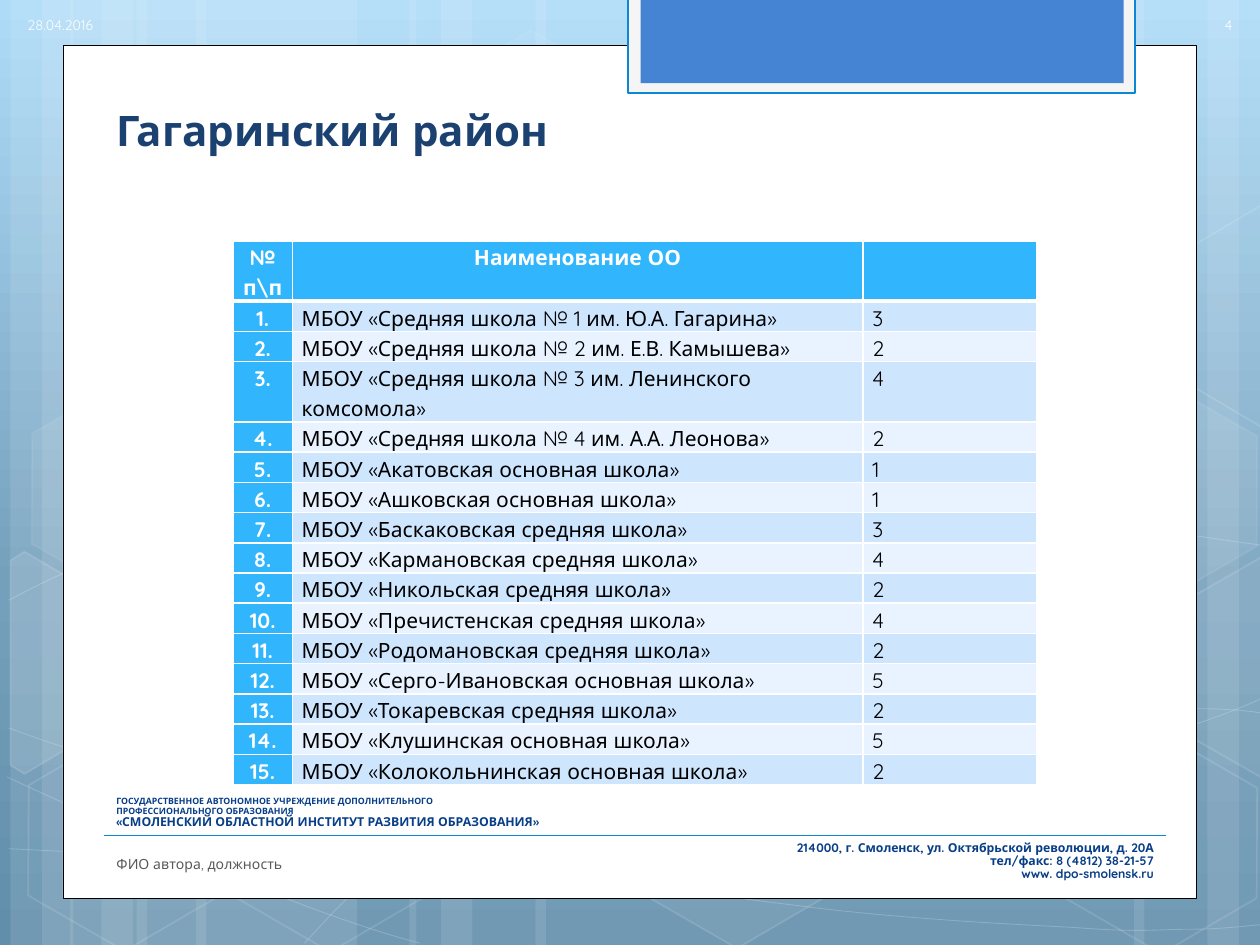
from copy import deepcopy
from math import cos, radians, sin

from lxml.etree import SubElement
from pptx import Presentation
from pptx.dml.color import RGBColor
from pptx.enum.shapes import MSO_CONNECTOR, MSO_SHAPE
from pptx.enum.text import MSO_ANCHOR, MSO_AUTO_SIZE, PP_ALIGN
from pptx.oxml.ns import qn
from pptx.util import Pt

FONT = "Quicksand"
WHITE = RGBColor(0xFF, 0xFF, 0xFF)
BLACK = RGBColor(0, 0, 0)
OFF_WHITE = RGBColor(0xFE, 0xFE, 0xFE)
GRAY = RGBColor(0x59, 0x59, 0x59)
NAVY = RGBColor(0x1B, 0x41, 0x71)
INSTITUTE_BLUE = RGBColor(0x07, 0x3E, 0x87)
LINE_BLUE = RGBColor(0x0B, 0x87, 0xD6)
TAB_BLUE = RGBColor(0x45, 0x84, 0xD3)
TAB_FRAME = RGBColor(0xF5, 0xF5, 0xF5)
HEADER_BLUE = RGBColor(0x31, 0xB6, 0xFD)
BANDS = (RGBColor(0xCE, 0xE5, 0xFE), RGBColor(0xE8, 0xF3, 0xFF))
SKY = ((0, RGBColor(0xAD, 0xDB, 0xF8)), (0.62, RGBColor(0x75, 0xA0, 0xBC)),
       (1, RGBColor(0x61, 0x8E, 0xAB)))

TITLE = "Гагаринский район"
HEADERS = ("№ п\\п", "Наименование ОО", "")
SCHOOLS = (
    ("МБОУ «Средняя школа № 1 им. Ю.А. Гагарина»", 3),
    ("МБОУ «Средняя школа № 2 им. Е.В. Камышева»", 2),
    ("МБОУ «Средняя школа № 3 им. Ленинского комсомола»", 4),
    ("МБОУ «Средняя школа № 4 им. А.А. Леонова»", 2),
    ("МБОУ «Акатовская основная школа»", 1),
    ("МБОУ «Ашковская основная школа»", 1),
    ("МБОУ «Баскаковская средняя школа»", 3),
    ("МБОУ «Кармановская средняя школа»", 4),
    ("МБОУ «Никольская средняя школа»", 2),
    ("МБОУ «Пречистенская средняя школа»", 4),
    ("МБОУ «Родомановская средняя школа»", 2),
    ("МБОУ «Серго-Ивановская основная школа»", 5),
    ("МБОУ «Токаревская средняя школа»", 2),
    ("МБОУ «Клушинская основная школа»", 5),
    ("МБОУ «Колокольнинская основная школа»", 2),
)
COLUMN_WIDTHS = (33.84, 326.16, 99.36)
LINE_HEIGHT = 17.25
TWO_LINE_ROWS = (0, 3)

# text, size, alignment, space before
INSTITUTE = (
    ("ГОСУДАРСТВЕННОЕ АВТОНОМНОЕ УЧРЕЖДЕНИЕ ДОПОЛНИТЕЛЬНОГО", 5, PP_ALIGN.LEFT, 0),
    ("ПРОФЕССИОНАЛЬНОГО ОБРАЗОВАНИЯ", 5, PP_ALIGN.LEFT, 0),
    ("«СМОЛЕНСКИЙ ОБЛАСТНОЙ ИНСТИТУТ РАЗВИТИЯ ОБРАЗОВАНИЯ»", 7, PP_ALIGN.LEFT, 0),
    ("214000, г. Смоленск, ул. Октябрьской революции, д. 20А", 7, PP_ALIGN.RIGHT, 7.1),
    ("тел/факс: 8 (4812) 38-21-57", 7, PP_ALIGN.RIGHT, 0),
    ("www. dpo-smolensk.ru", 7, PP_ALIGN.RIGHT, 0),
)
# text, box, colour, alignment
LABELS = (
    ("28.04.2016", (8.64, 4.32, 62.64, 20.16), OFF_WHITE, PP_ALIGN.LEFT),
    ("ФИО автора, должность", (59.5, 484.56, 275.76, 18), GRAY, PP_ALIGN.LEFT),
    ("4", (677.52, 4.32, 33.84, 20.16), OFF_WHITE, PP_ALIGN.RIGHT),
)

# left, width
STRIPS = ((78, 126), (6, 36), (24, 60), (112, 126), (40, 36), (58, 60),
          (528, 126), (690, 36), (648, 60), (306, 222), (234, 36), (252, 60))
# start point, then three points for every cubic segment
CURVES = (
    ((5, 485), (44, 487), (83, 489), (137, 488), (191, 487), (258, 486), (330, 479),
     (402, 472), (504, 458), (570, 444), (636, 431), (703, 409), (725, 397)),
    ((5, 343), (26, 332), (47, 321), (87, 310), (128, 300), (186, 284), (250, 279),
     (314, 274), (392, 273), (471, 279), (550, 284), (682, 307), (725, 312)),
    ((4, 444), (91, 484), (178, 523), (240, 539)),
    ((5, 416), (27, 424), (50, 432), (92, 444), (134, 454), (197, 472), (257, 485),
     (317, 497), (392, 510), (452, 517), (512, 525), (576, 528), (614, 530),
     (652, 533), (662, 531), (680, 531), (699, 531), (712, 529), (725, 528)),
    ((174, 539), (187, 525), (200, 510), (217, 498), (234, 485), (259, 470), (279, 460),
     (300, 450), (312, 446), (338, 438), (364, 431), (413, 421), (438, 416),
     (464, 411), (467, 411), (490, 410), (512, 407), (547, 405), (572, 405),
     (597, 404), (638, 405), (638, 405), (654, 405), (670, 405), (686, 405),
     (699, 405), (711, 406), (718, 407), (724, 408), (722, 407), (724, 408)),
)
# left, top, fill opacity, line opacity
HEXAGONS = ((240.5, 26, 4, 8), (358, 424, 6, 12), (8, 425.5, 0, 12), (10, 224.5, 7, 8),
            (125.5, 426, 0, 12), (542, 326, 10, 12), (600.5, 427, 0, 12), (600.5, 226, 7, 8))
TILT = 30
# corners after tilting, centre of tilt, fill opacity
CUT_HEXAGONS = (
    (((6, 320), (14, 315), (69, 347), (68, 410), (14, 442), (6, 437)), (25.9, 385.2), 10),
    (((667, 349), (721, 318), (726, 321), (726, 441), (721, 444), (667, 413)),
     (709.2, 374.4), 4),
    (((667, 149), (721, 117), (727, 121), (726, 241), (721, 244), (667, 212)),
     (709.2, 173.5), 0),
)
# box, fill, line colour, line width
PANELS = (
    ((36, 25.92, 648, 487.3), WHITE, BLACK, 0.5),
    ((359, -1.44, 289.7, 54.72), TAB_FRAME, LINE_BLUE, 1.25),
    ((366.1, -1.44, 276, 48.96), TAB_BLUE, None, 0),
)


def points(values):
    return [Pt(value) for value in values]


def paint(shape, fill=None, line=None, width=1, fill_opacity=100, line_opacity=100):
    shape.shadow.inherit = False
    for part, color, opacity in ((shape.fill, fill, fill_opacity),
                                 (shape.line.fill, line, line_opacity)):
        if color is None or opacity == 0:
            part.background()
            continue
        part.solid()
        part.fore_color.rgb = color
        if opacity < 100:
            properties = shape.element.spPr
            owner = properties if part is shape.fill else properties.find(qn("a:ln"))
            color_element = owner.find(qn("a:solidFill")).find(qn("a:srgbClr"))
            SubElement(color_element, qn("a:alpha"), val=str(opacity * 1000))
    if line is not None:
        shape.line.width = Pt(width)


def write(paragraph, text, size=8, color=BLACK, bold=False, align=PP_ALIGN.LEFT,
          spacing=1.0, before=0):
    paragraph.alignment = align
    paragraph.line_spacing = spacing
    paragraph.space_before = Pt(before)
    paragraph.font.size = Pt(size)
    if text:
        run = paragraph.add_run()
        run.text = text
        run.font.name, run.font.size, run.font.bold = FONT, Pt(size), bold
        run.font.color.rgb = color


def add_box(slide, box):
    frame = slide.shapes.add_textbox(*points(box)).text_frame
    frame.word_wrap = True
    frame.vertical_anchor = MSO_ANCHOR.MIDDLE
    return frame


def add_outline(slide, outline, close):
    vertices = [points(vertex) for vertex in outline]
    builder = slide.shapes.build_freeform(*vertices[0])
    builder.add_line_segments(vertices[1:], close=close)
    return builder.convert_to_shape()


def add_curve(slide, controls):
    """Draw the control polygon, then join each three lines into one cubic segment."""
    curve = add_outline(slide, controls, False)
    outline = curve.element.find(".//" + qn("a:path"))
    lines = outline.findall(qn("a:lnTo"))
    for start in range(0, len(lines), 3):
        cubic = SubElement(outline, qn("a:cubicBezTo"))
        for line in lines[start:start + 3]:
            cubic.append(line[0])
            outline.remove(line)
    return curve


def turn_back(point, center):
    angle = radians(-TILT)
    x, y = point[0] - center[0], point[1] - center[1]
    return (center[0] + x * cos(angle) - y * sin(angle),
            center[1] + x * sin(angle) + y * cos(angle))


def add_background(slide):
    fill = slide.background.fill
    fill.gradient()
    fill.gradient_angle = 270
    stops = slide.element.find(".//" + qn("a:gsLst"))
    stops.append(deepcopy(stops[-1]))
    for stop, (position, color) in zip(fill.gradient_stops, SKY):
        stop.position, stop.color.rgb = position, color
    for left, width in STRIPS:
        strip = slide.shapes.add_shape(MSO_SHAPE.RECTANGLE, *points((left, 0, width, 540)))
        paint(strip, WHITE, fill_opacity=10)
    for controls in CURVES:
        paint(add_curve(slide, controls), None, WHITE, 0.5, line_opacity=20)
    for left, top, fill_opacity, line_opacity in HEXAGONS:
        hexagon = slide.shapes.add_shape(MSO_SHAPE.HEXAGON, *points((left, top, 126, 109.44)))
        hexagon.adjustments[0] = 0.285
        hexagon.rotation = TILT
        paint(hexagon, WHITE, WHITE, 1, fill_opacity, line_opacity)
    for corners, center, fill_opacity in CUT_HEXAGONS:
        hexagon = add_outline(slide, [turn_back(corner, center) for corner in corners], True)
        hexagon.rotation = TILT
        paint(hexagon, WHITE, WHITE, 1, fill_opacity, 12)
    for box, fill, line, width in PANELS:
        paint(slide.shapes.add_shape(MSO_SHAPE.RECTANGLE, *points(box)), fill, line, width)


def add_footer(slide):
    frame = add_box(slide, (59.4, 451.2, 606.96, 56.88))
    for index, (text, size, align, before) in enumerate(INSTITUTE):
        paragraph = frame.add_paragraph() if index else frame.paragraphs[0]
        write(paragraph, text, size, INSTITUTE_BLUE, True, align, 0.9, before)
    rule = slide.shapes.add_connector(MSO_CONNECTOR.STRAIGHT, *points((59.5, 477.5, 666, 477.5)))
    rule.line.fill.solid()
    rule.line.fill.fore_color.rgb = LINE_BLUE
    rule.line.width = Pt(1)
    SubElement(rule.element.spPr, qn("a:effectLst"))
    rule.element.remove(rule.element.find(qn("p:style")))


def add_title(slide):
    title = slide.shapes.title
    title.left, title.top, title.width, title.height = points((59.4, 54.4, 606.96, 39.6))
    title.text_frame.vertical_anchor = MSO_ANCHOR.MIDDLE
    title.text_frame.auto_size = MSO_AUTO_SIZE.NONE
    write(title.text_frame.paragraphs[0], TITLE, 24, NAVY, True)
    title.element.getparent().append(title.element)  # in front of the white panel


def add_borders(cell, bottom):
    for side, width in (("L", 1), ("R", 1), ("T", 1), ("B", bottom)):
        line = SubElement(cell._tc.get_or_add_tcPr(), qn(f"a:ln{side}"), w=str(Pt(width)))
        SubElement(SubElement(line, qn("a:solidFill")), qn("a:srgbClr"), val=str(WHITE))


def add_school_table(slide):
    rows = [HEADERS] + [(f"{number}.", name, str(count))
                        for number, (name, count) in enumerate(SCHOOLS, 1)]
    heights = [LINE_HEIGHT * (2 if row in TWO_LINE_ROWS else 1) for row in range(len(rows))]
    box = (133.2, 137.6, sum(COLUMN_WIDTHS), sum(heights))
    table = slide.shapes.add_table(len(rows), len(HEADERS), *points(box)).table
    for column, width in zip(table.columns, COLUMN_WIDTHS):
        column.width = Pt(width)
    for r, (texts, height) in enumerate(zip(rows, heights)):
        table.rows[r].height = Pt(height)
        for c, text in enumerate(texts):
            cell = table.cell(r, c)
            heading = r == 0 or c == 0
            add_borders(cell, 3 if r == 0 else 1)
            cell.fill.solid()
            cell.fill.fore_color.rgb = HEADER_BLUE if heading else BANDS[(r - 1) % 2]
            cell.margin_left = cell.margin_right = Pt(5.4)
            cell.margin_top = cell.margin_bottom = 0
            write(cell.text_frame.paragraphs[0], text, 12, WHITE if heading else BLACK,
                  heading, PP_ALIGN.CENTER if heading else PP_ALIGN.LEFT, 1.15)


def main():
    presentation = Presentation()
    presentation.slide_width, presentation.slide_height = Pt(720), Pt(540)
    slide = presentation.slides.add_slide(presentation.slide_layouts[5])
    add_background(slide)
    add_footer(slide)
    add_title(slide)
    add_school_table(slide)
    for text, box, color, align in LABELS:
        write(add_box(slide, box).paragraphs[0], text, 8, color, align=align)
    presentation.save("out.pptx")


if __name__ == "__main__":
    main()
